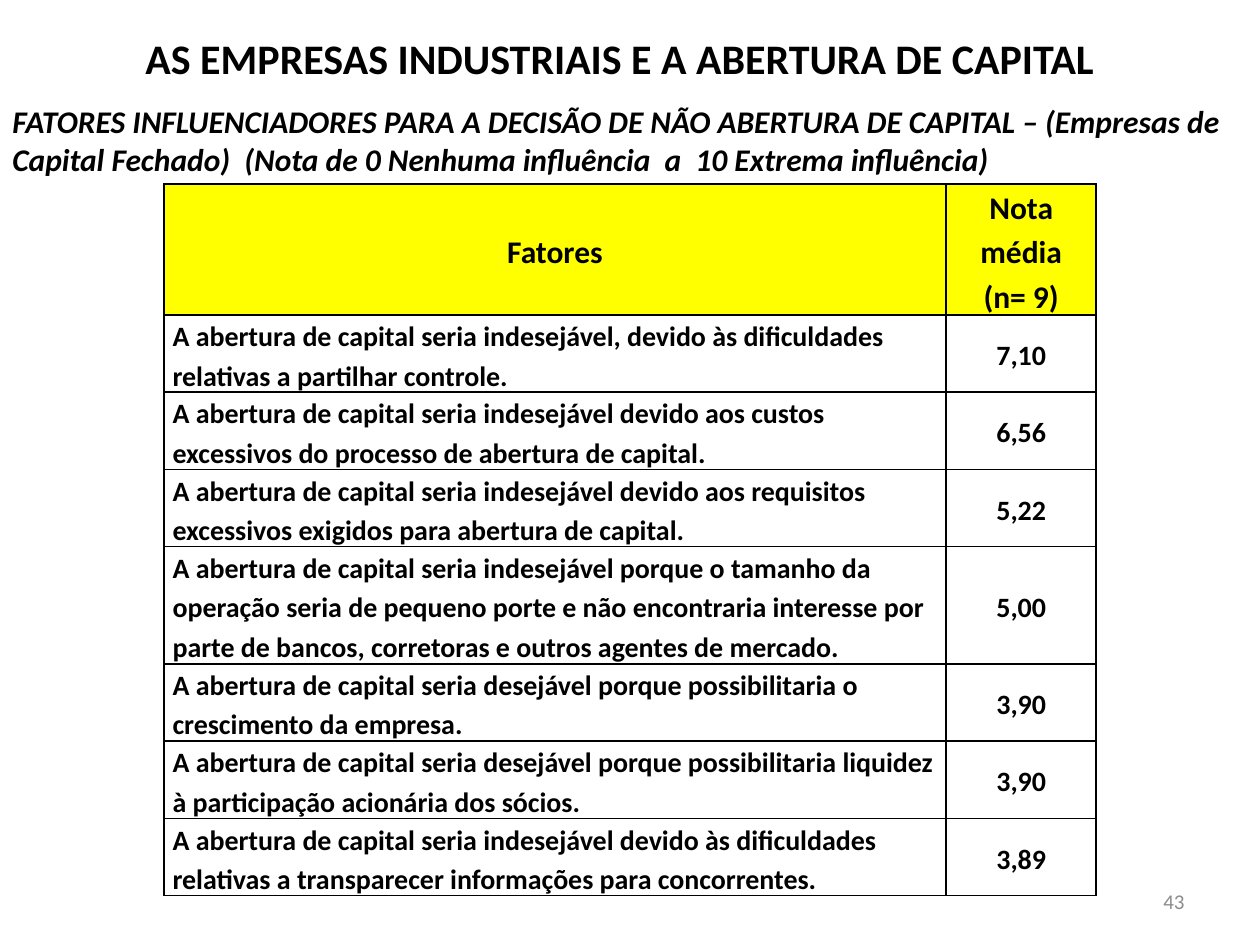
from lxml import etree
from pptx import Presentation
from pptx import util as u
from pptx.dml.color import RGBColor
from pptx.enum import text
from pptx.oxml import ns

FACTORS = [
    ("A abertura de capital seria indesejável, devido às dificuldades relativas a partilhar controle.", "7,10"),
    ("A abertura de capital seria indesejável devido aos custos excessivos do processo de abertura de capital.", "6,56"),
    ("A abertura de capital seria indesejável devido aos requisitos excessivos exigidos para abertura de capital.", "5,22"),
    ("A abertura de capital seria indesejável porque o tamanho da operação seria de pequeno porte e não "
     "encontraria interesse por parte de bancos, corretoras e outros agentes de mercado.", "5,00"),
    ("A abertura de capital seria desejável porque possibilitaria o crescimento da empresa.", "3,90"),
    ("A abertura de capital seria desejável porque possibilitaria liquidez à participação acionária dos sócios.", "3,90"),
    ("A abertura de capital seria indesejável devido às dificuldades relativas a transparecer informações "
     "para concorrentes.", "3,89"),
]
ROW_HEIGHTS = [1.04, 0.61, 0.61, 0.61, 0.93, 0.61, 0.61, 0.61]
COLUMN_WIDTHS = [6.21, 1.19]
LEFT, CENTER, RIGHT = text.PP_ALIGN.LEFT, text.PP_ALIGN.CENTER, text.PP_ALIGN.RIGHT


def rgb(value):
    """Return the colour for a hex string."""
    return RGBColor.from_string(value)


def write(frame, words, size, align=LEFT, color="000000", bold=True, italic=False):
    """Write one formatted paragraph into a text frame and return it."""
    frame.word_wrap = True
    paragraph = frame.paragraphs[0]
    paragraph.text = words
    paragraph.alignment = align
    font = paragraph.font
    font.name, font.size = "Calibri", u.Pt(size)
    font.bold, font.italic = bold, italic
    font.color.rgb = rgb(color)
    return paragraph


def add_title(slide, words):
    """Place and format the title placeholder."""
    title = slide.shapes.title
    title.left, title.top = u.Inches(0), u.Inches(0.21)
    title.width, title.height = u.Inches(9.84), u.Inches(0.81)
    title.text_frame.auto_size = text.MSO_AUTO_SIZE.NONE
    title.text_frame.vertical_anchor = text.MSO_ANCHOR.TOP
    write(title.text_frame, words, 24, CENTER)


def add_label(slide, box, words, size, anchor=text.MSO_ANCHOR.TOP, **style):
    """Add a wrapped text box."""
    frame = slide.shapes.add_textbox(*map(u.Inches, box)).text_frame
    frame.vertical_anchor = anchor
    write(frame, words, size, **style)


def add_borders(cell):
    """Draw a thin black line on each side of a cell."""
    properties = cell._tc.get_or_add_tcPr()
    for side in ("a:lnL", "a:lnR", "a:lnT", "a:lnB"):
        line = etree.SubElement(properties, ns.qn(side), w=str(u.Pt(1)))
        fill = etree.SubElement(line, ns.qn("a:solidFill"))
        etree.SubElement(fill, ns.qn("a:srgbClr"), val="000000")


def fill_cell(cell, words, size, align, color):
    """Write and format one table cell."""
    add_borders(cell)
    cell.fill.solid()
    cell.fill.fore_color.rgb = rgb(color)
    cell.vertical_anchor = text.MSO_ANCHOR.MIDDLE
    cell.margin_left = cell.margin_right = u.Inches(0.07)
    cell.margin_top = cell.margin_bottom = 0
    write(cell.text_frame, words, size, align).line_spacing = 1.15


def add_factor_table(slide):
    """Add the table of factors and their average scores."""
    box = (1.3, 1.46, sum(COLUMN_WIDTHS), sum(ROW_HEIGHTS))
    table = slide.shapes.add_table(len(ROW_HEIGHTS), 2, *map(u.Inches, box)).table
    for column, width in zip(table.columns, COLUMN_WIDTHS):
        column.width = u.Inches(width)
    for row, height in zip(table.rows, ROW_HEIGHTS):
        row.height = u.Inches(height)
    fill_cell(table.cell(0, 0), "Fatores", 18, CENTER, "FFFF00")
    fill_cell(table.cell(0, 1), "Nota média\v(n= 9)", 18, CENTER, "FFFF00")
    for index, (factor, score) in enumerate(FACTORS, 1):
        fill_cell(table.cell(index, 0), factor, 16, LEFT, "FFFFFF")
        fill_cell(table.cell(index, 1), score, 16, CENTER, "FFFFFF")


def main():
    """Build the slide and save it."""
    deck = Presentation()
    deck.slide_width, deck.slide_height = u.Inches(10), u.Inches(7.5)
    slide = deck.slides.add_slide(deck.slide_layouts[5])
    add_title(slide, "AS EMPRESAS INDUSTRIAIS E A ABERTURA DE CAPITAL")
    add_label(slide, (0, 0.76, 10, 0.71),
              "FATORES INFLUENCIADORES PARA A DECISÃO DE NÃO ABERTURA DE CAPITAL – (Empresas de Capital "
              "Fechado)  (Nota de 0 Nenhuma influência  a  10 Extrema influência)", 18, italic=True)
    add_factor_table(slide)
    add_label(slide, (7.17, 6.95, 2.33, 0.4), "43", 12, text.MSO_ANCHOR.MIDDLE,
              align=RIGHT, color="8C8C8C", bold=False)
    deck.save("out.pptx")


if __name__ == "__main__":
    main()
